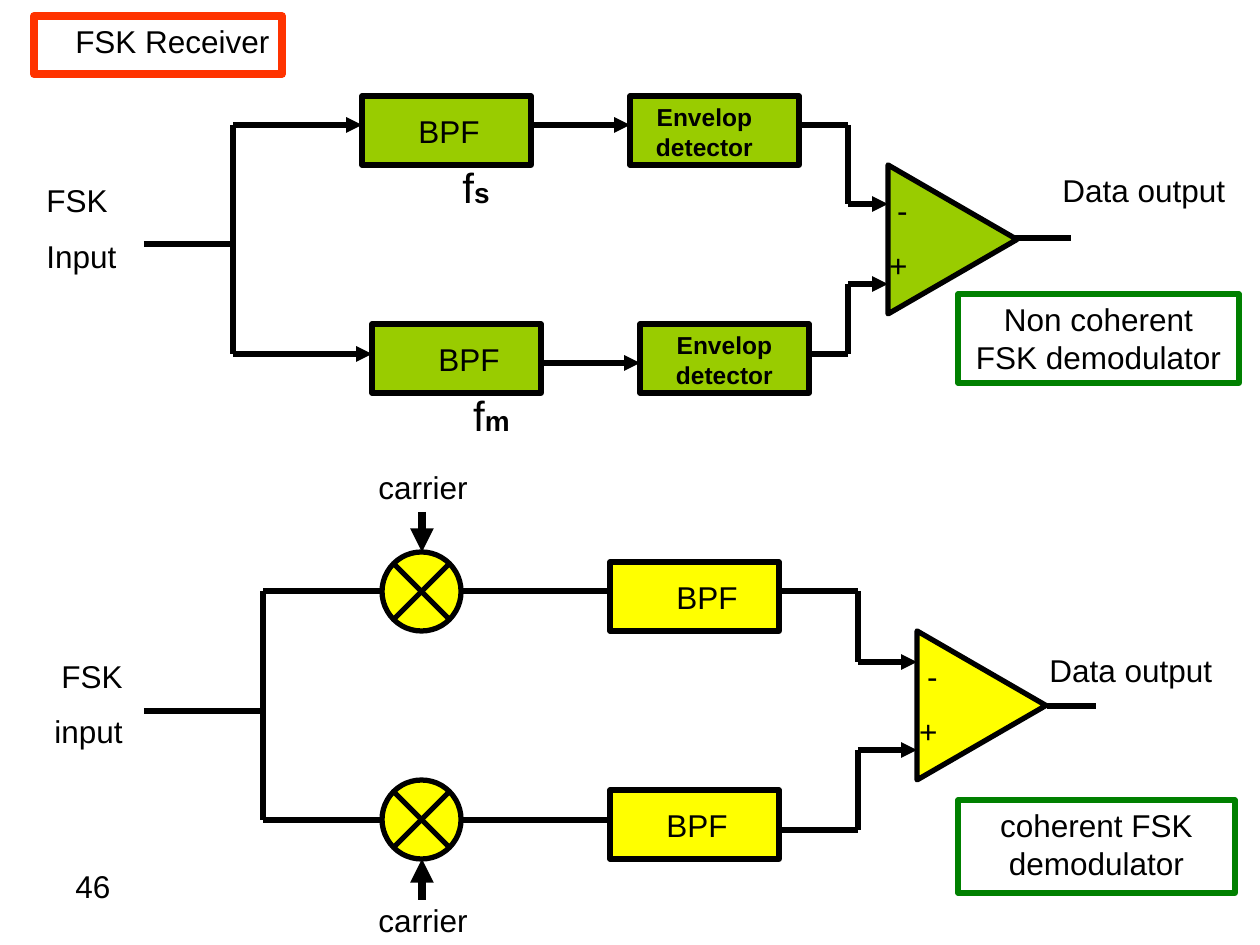
from lxml import etree
from pptx import Presentation, util as u
from pptx.dml.color import RGBColor
from pptx.enum import shapes, text
from pptx.oxml.ns import qn

EMU_PER_PX = 914400 / 126
COLORS = {"ink": "000000", "green": "99CC00", "yellow": "FFFF00",
          "frame": "008000", "title": "FF3300"}
KIND = shapes.MSO_SHAPE
LEFT, CENTER, RIGHT = text.PP_ALIGN.LEFT, text.PP_ALIGN.CENTER, text.PP_ALIGN.RIGHT

# Blocks: size and rotation by kind, then kind, colour, left, top
SIZES = {KIND.RECTANGLE: (169, 69, 0),
         KIND.ISOSCELES_TRIANGLE: (149, 129, 90),
         KIND.FLOWCHART_SUMMING_JUNCTION: (79, 79, 0)}
BLOCKS = [
    (KIND.RECTANGLE, "green", 362, 96),
    (KIND.RECTANGLE, "green", 630, 96),
    (KIND.RECTANGLE, "green", 372, 324),
    (KIND.RECTANGLE, "green", 640, 324),
    (KIND.ISOSCELES_TRIANGLE, "green", 878, 175),
    (KIND.ISOSCELES_TRIANGLE, "yellow", 907, 641),
    (KIND.RECTANGLE, "yellow", 610, 562),
    (KIND.RECTANGLE, "yellow", 610, 790),
    (KIND.FLOWCHART_SUMMING_JUNCTION, "yellow", 382, 552),
    (KIND.FLOWCHART_SUMMING_JUNCTION, "yellow", 382, 780),
]

# Wires: corner points, arrow at the end, width in points
WIRES = [
    # Non coherent receiver
    ([(144, 244), (233, 244)], False, 3),
    ([(233, 244), (233, 125), (362, 125)], True, 3),
    ([(233, 244), (233, 354), (372, 354)], True, 3),
    ([(530, 125), (630, 125)], True, 3),
    ([(541, 363), (640, 363)], True, 3),
    ([(799, 125), (848, 125), (848, 204), (888, 204)], True, 3),
    ([(809, 354), (848, 354), (848, 284), (888, 284)], True, 3),
    ([(1012, 238), (1071, 238)], False, 3),
    # Coherent receiver
    ([(144, 711), (263, 711)], False, 3),
    ([(382, 591), (263, 591), (263, 820), (382, 820)], False, 3),
    ([(461, 591), (610, 591)], False, 3),
    ([(461, 820), (610, 820)], False, 3),
    ([(779, 591), (858, 591), (858, 662), (917, 662)], True, 3),
    ([(779, 830), (858, 830), (858, 750), (917, 750)], True, 3),
    ([(1047, 706), (1096, 706)], False, 3),
    ([(422, 512), (422, 552)], True, 4.5),
    ([(422, 900), (422, 859)], True, 4.5),
]

# Labels: paragraphs, frame, alignment, size, bold
LABELS = [
    (["-", "+"], (858, 185, 62, 107), RIGHT, 18, False),
    (["Data output"], (1050, 165, 218, 50), LEFT, 18, False),
    (["FSK", "Input"], (34, 175, 149, 107), LEFT, 18, False),
    (["BPF"], (382, 106, 110, 50), RIGHT, 18, False),
    (["BPF"], (392, 334, 120, 50), RIGHT, 18, False),
    (["Envelop detector"], (630, 96, 149, 72), CENTER, 14, True),
    (["Envelop detector"], (650, 324, 149, 72), CENTER, 14, True),
    (["-", "+"], (888, 651, 62, 107), RIGHT, 18, False),
    (["FSK", "input"], (25, 651, 110, 107), RIGHT, 18, False),
    (["Data output"], (1037, 645, 218, 50), LEFT, 18, False),
    (["BPF"], (630, 572, 120, 50), RIGHT, 18, False),
    (["BPF"], (620, 800, 120, 50), RIGHT, 18, False),
    (["carrier"], (362, 895, 118, 50), RIGHT, 18, False),
    (["carrier"], (362, 462, 118, 50), RIGHT, 18, False),
    (["46"], (63, 861, 294, 65), LEFT, 18, False),
]

# Framed captions: text, frame, alignment, colour, line width
CAPTIONS = [
    ("Non coherent FSK demodulator", (958, 294, 281, 89), CENTER, "frame", 3),
    ("coherent FSK demodulator", (958, 800, 277, 93), CENTER, "frame", 3),
    ("FSK Receiver", (34, 16, 248, 58), RIGHT, "title", 4.5),
]

# Filter frequencies: subscript, frame
FREQUENCIES = [("s", (384, 155, 118, 63)), ("m", (404, 383, 118, 63))]


def color(name):
    return RGBColor.from_string(COLORS[name])


def scaled(frame):
    return [round(value * EMU_PER_PX) for value in frame]


def set_line(line, name, width):
    line.color.rgb = color(name)
    line.width = u.Pt(width)


def add_block(page, kind, frame, fill, line, width):
    block = page.shapes.add_shape(kind, *scaled(frame))
    block.shadow.inherit = False
    if fill:
        block.fill.solid()
        block.fill.fore_color.rgb = color(fill)
    else:
        block.fill.background()
    set_line(block.line, line, width)
    return block


def add_wire(page, start, end, arrow, width):
    wire = page.shapes.add_connector(
        shapes.MSO_CONNECTOR.STRAIGHT, *scaled(start + end))
    set_line(wire.line, "ink", width)
    if arrow:
        line = wire._element.spPr.find(qn("a:ln"))
        etree.SubElement(line, qn("a:tailEnd"), type="triangle")
    etree.SubElement(wire._element.spPr, qn("a:effectLst"))


def write(box, lines, align, size, bold=False):
    box.text_frame.word_wrap = True
    box.text_frame.vertical_anchor = text.MSO_ANCHOR.TOP
    box.text_frame.text = "\n".join(lines)
    for index, para in enumerate(box.text_frame.paragraphs):
        para.alignment = align
        para.space_before = u.Pt(10 if index else 0)
        para.font.name = "Arial"
        para.font.size = u.Pt(size)
        para.font.bold = bold
        para.font.color.rgb = color("ink")


def main():
    deck = Presentation()
    deck.slide_width, deck.slide_height = scaled((1260, 945))
    page = deck.slides.add_slide(deck.slide_layouts[6])

    for kind, fill, left, top in BLOCKS:
        width, height, rotation = SIZES[kind]
        block = add_block(page, kind, (left, top, width, height), fill, "ink", 3)
        block.rotation = rotation

    for points, arrow, width in WIRES:
        for start, end in zip(points, points[1:]):
            add_wire(page, start, end, arrow and end == points[-1], width)

    for lines, frame, align, size, bold in LABELS:
        write(page.shapes.add_textbox(*scaled(frame)), lines, align, size, bold)

    for caption, frame, align, line, width in CAPTIONS:
        box = add_block(page, KIND.RECTANGLE, frame, None, line, width)
        write(box, [caption], align, 18)

    for subscript, frame in FREQUENCIES:
        box = page.shapes.add_textbox(*scaled(frame))
        write(box, ["f"], RIGHT, 24)
        span = box.text_frame.paragraphs[0].add_run()
        span.text = subscript
        span.font.size = u.Pt(16)
        span.font.bold = True

    deck.save("out.pptx")


if __name__ == "__main__":
    main()
